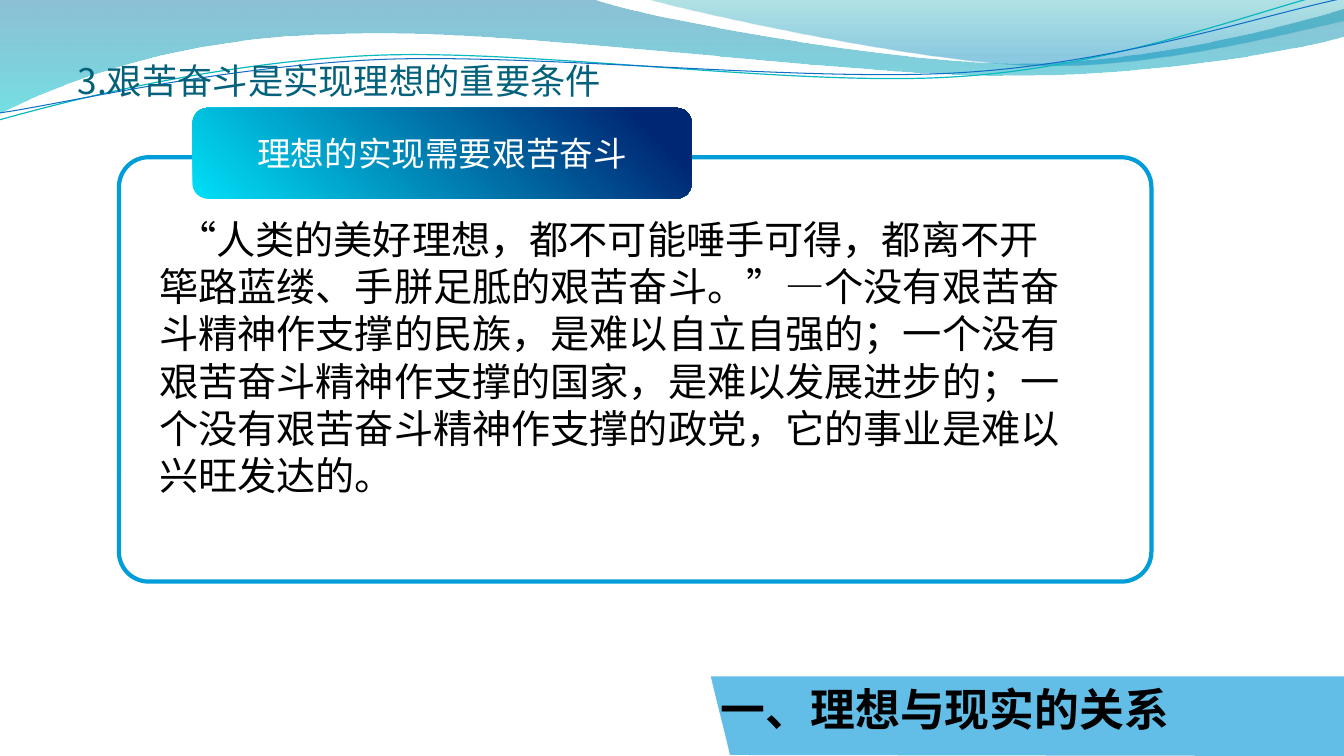
"""Build the slide on ideals and hard work."""
from lxml import etree
from pptx import Presentation
from pptx import util as u
from pptx.dml.color import RGBColor
from pptx.enum import lang, shapes, text
from pptx.oxml.ns import qn

WIDTH, HEIGHT = 13.33, 7.5
FONT = "Noto Sans CJK SC"
BLACK = RGBColor(0x00, 0x00, 0x00)
WHITE = RGBColor(0xFF, 0xFF, 0xFF)
TITLE_TEAL = RGBColor(0x04, 0x61, 0x7B)
FRAME_BLUE = RGBColor(0x00, 0x9D, 0xD9)
BAND_BLUE = RGBColor(0x20, 0xA3, 0xDE)
THREAD_TEAL = RGBColor(0x0A, 0xB8, 0xBF)
THREAD_BLUE = RGBColor(0x0F, 0x6F, 0xC6)
WAVE_DEEP = RGBColor(0x00, 0x74, 0xA1)
WAVE_CYAN = RGBColor(0x00, 0xC6, 0xCF)
CREST_GREEN = RGBColor(0x00, 0xA1, 0xA9)
CREST_BLUE = RGBColor(0x00, 0x8B, 0xBF)
LABEL_CYAN = RGBColor(0x00, 0xDF, 0xF6)
LABEL_NAVY = RGBColor(0x00, 0x27, 0x74)

TITLE = "3.艰苦奋斗是实现理想的重要条件"
LABEL = "理想的实现需要艰苦奋斗"
SECTION = "一、理想与现实的关系"
BODY = (
    "“人类的美好理想，都不可能唾手可得，都离不开筚路蓝缕、手胼足胝的艰苦奋斗。”"
    "—个没有艰苦奋斗精神作支撑的民族，是难以自立自强的；"
    "一个没有艰苦奋斗精神作支撑的国家，是难以发展进步的；"
    "一个没有艰苦奋斗精神作支撑的政党，它的事业是难以兴旺发达的。"
)

WAVES = [
    ([(0, 0), (5.87, -0.01), (6.34, 0.17, 8.85, 0.63, 10.11, 0.63),
      (11.38, 0.63, 12.78, 0.26, WIDTH, 0.09), (13.35, 0.36),
      (13.11, 0.44, 11.6, 0.76, 9.94, 0.75), (8.29, 0.75, 5.09, 0.28, 3.43, 0.34),
      (1.72, 0.36, 0.61, 0.83, -0.01, 1.13)],
     [(0, WAVE_DEEP, 45), (100, WAVE_CYAN, 55)]),
    ([(6.39, -0.01), (6.79, 0.11, 9.09, 0.62, 10.25, 0.65),
      (11.41, 0.69, 12.82, 0.32, WIDTH, 0.21), (WIDTH, 0)],
     [(0, CREST_GREEN, 30), (80, CREST_BLUE, 45)]),
]
THREADS = [
    ([(-0.01, 1.19), (0.64, 1.01, 2.11, 0.62, 3.69, 0.55),
      (5.27, 0.48, 7.9, 0.87, 9.5, 0.76), (11.1, 0.66, 12.52, 0.08, 13.31, -0.1)],
     THREAD_TEAL, 0.85),
    ([(0, 1.12), (0.63, 1.03, 2.18, 0.66, 3.78, 0.59),
      (5.37, 0.53, 7.96, 0.82, 9.55, 0.72), (11.15, 0.62, 12.55, 0.14, 13.34, -0.02)],
     THREAD_BLUE, 0.75),
]
BAND = [(7.05, 6.71), (WIDTH, 6.71), (WIDTH, HEIGHT), (7.24, 7.49),
        (7.18, 7.23, 7.11, 6.97, 7.05, 6.71)]
LABEL_STOPS = [(0, LABEL_CYAN, 100), (90, LABEL_NAVY, 100), (100, LABEL_NAVY, 100)]


def draw_outline(page, outline, close=True):
    points = [(u.Inches(segment[i]), u.Inches(segment[i + 1]))
              for segment in outline for i in range(0, len(segment), 2)]
    builder = page.shapes.build_freeform(*points[0], scale=1.0)
    builder.add_line_segments(points[1:], close=close)
    shape = builder.convert_to_shape()
    bend_curves(shape, outline)
    shape.shadow.inherit = False
    shape.line.fill.background()
    return shape


def bend_curves(shape, outline):
    steps = iter(shape.element.spPr.findall(".//" + qn("a:lnTo")))
    for segment in outline[1:]:
        step = next(steps)
        if len(segment) == 6:
            step.tag = qn("a:cubicBezTo")
            for _ in range(2):
                extra = next(steps)
                holder = extra.getparent()
                step.append(extra[0])
                holder.remove(extra)


def add_alpha(color_element, percent):
    etree.SubElement(color_element, qn("a:alpha"), val=str(percent * 1000))


def fill_gradient(shape, stops, angle):
    shape.fill.gradient()
    shape.fill.gradient_angle = angle
    stop_list = shape.element.spPr.find(".//" + qn("a:gsLst"))
    for old in list(stop_list):
        stop_list.remove(old)
    for position, color, alpha in stops:
        stop = etree.SubElement(stop_list, qn("a:gs"), pos=str(position * 1000))
        add_alpha(etree.SubElement(stop, qn("a:srgbClr"), val=str(color)), alpha)


def add_rounded(page, place, radius):
    shape = page.shapes.add_shape(shapes.MSO_SHAPE.ROUNDED_RECTANGLE, *map(u.Inches, place))
    shape.adjustments[0] = radius
    shape.shadow.inherit = False
    return shape


def write(shape, words, size, color, anchor=text.MSO_ANCHOR.MIDDLE,
          align=text.PP_ALIGN.LEFT, bold=False):
    frame = shape.text_frame
    frame.text = words
    frame.word_wrap = True
    frame.vertical_anchor = anchor
    para = frame.paragraphs[0]
    para.alignment = align
    span = para.runs[0]
    span.font.size, span.font.bold = u.Pt(size), bold
    span.font.color.rgb = color
    span.font.name = FONT
    span.font.language_id = lang.MSO_LANGUAGE_ID.SIMPLIFIED_CHINESE
    etree.SubElement(span.font._element, qn("a:ea"), typeface=FONT)
    return para


def main():
    deck = Presentation()
    deck.slide_width, deck.slide_height = u.Inches(WIDTH), u.Inches(HEIGHT)
    page = deck.slides.add_slide(deck.slide_layouts[6])

    for outline, stops in WAVES:
        fill_gradient(draw_outline(page, outline), stops, 270)
    for outline, color, weight in THREADS:
        thread = draw_outline(page, outline, close=False)
        thread.fill.background()
        thread.line.color.rgb = color
        thread.line.width = u.Pt(weight)

    title = page.shapes.add_textbox(*map(u.Inches, (0.67, 0.54, 12, 0.52)))
    write(title, TITLE, 25.2, TITLE_TEAL)

    body = page.shapes.add_textbox(*map(u.Inches, (1.48, 2.09, 9.24, 4.3)))
    para = write(body, BODY, 28, BLACK, text.MSO_ANCHOR.TOP)
    para._p.get_or_add_pPr().set("indent", str(u.Inches(0.18)))

    band = draw_outline(page, BAND)
    band.fill.solid()
    band.fill.fore_color.rgb = BAND_BLUE
    add_alpha(band.element.spPr.find(qn("a:solidFill"))[0], 70)
    write(band, SECTION, 32, BLACK, text.MSO_ANCHOR.TOP, bold=True)

    border = add_rounded(page, (1.18, 1.56, 10.24, 4.21), 0.07)
    border.fill.background()
    border.line.color.rgb = FRAME_BLUE
    border.line.width = u.Pt(3)

    label = add_rounded(page, (1.91, 1.07, 4.95, 0.9), 0.167)
    fill_gradient(label, LABEL_STOPS, 45)
    label.line.fill.background()
    write(label, LABEL, 24, WHITE, align=text.PP_ALIGN.CENTER)

    deck.save("out.pptx")


if __name__ == "__main__":
    main()
